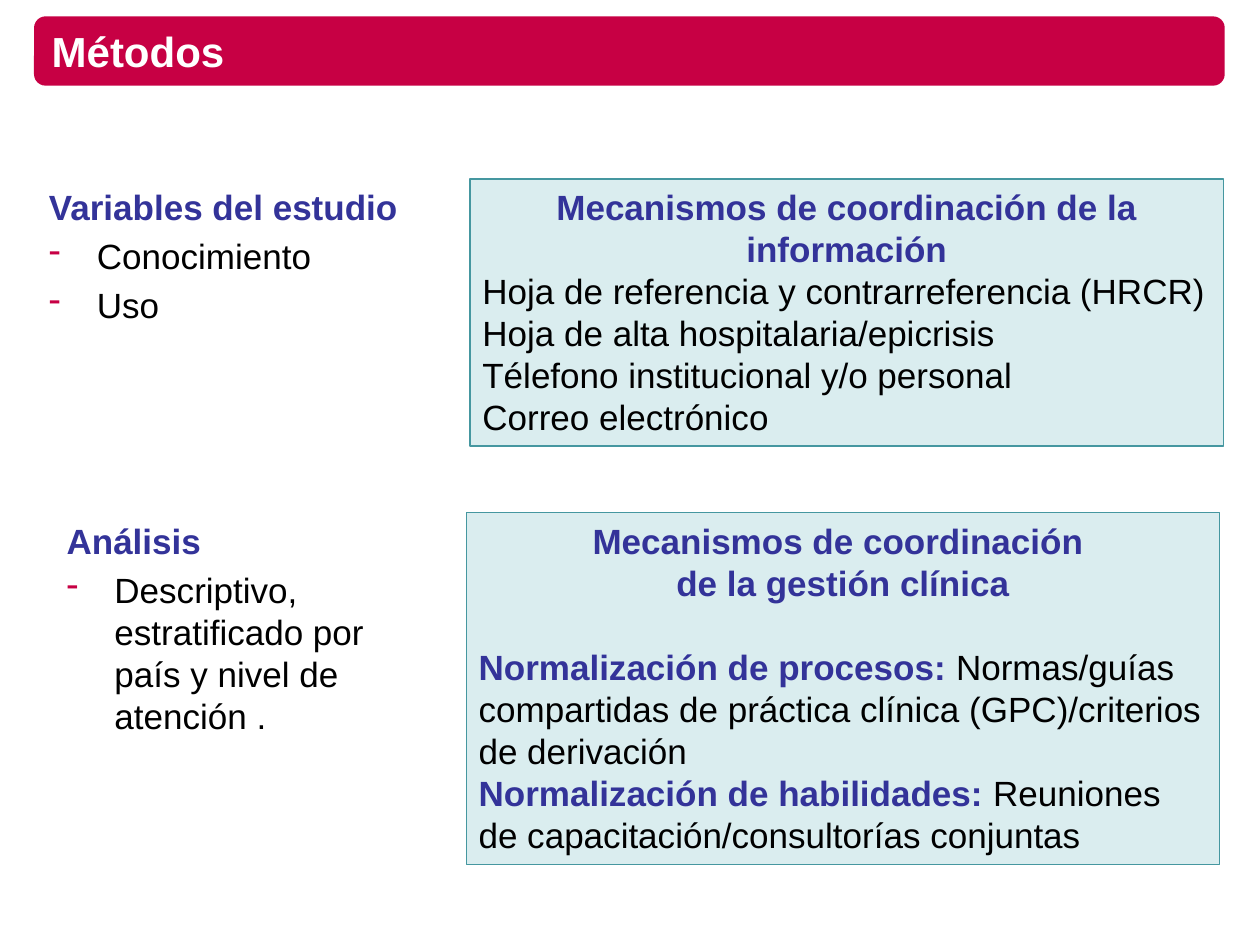
import dataclasses
import lxml.etree
import pptx
import pptx.dml.color
import pptx.enum.shapes
import pptx.enum.text
import pptx.oxml.ns
import pptx.util


@dataclasses.dataclass(frozen=True)
class Theme:
    font: str = "Arial"
    title_size: int = 24
    body_size: int = 20
    accent: str = "C70044"
    heading: str = "333399"
    text: str = "000000"
    inverse: str = "FFFFFF"
    panel: str = "DAEDEF"
    border: str = "4597A0"


THEME = Theme()
WIDTH, HEIGHT = 10, 7.5
UPPER_ROW, LOWER_ROW = 1.42, 4.07
PANEL_WIDTH = 5.98
ALIGN = pptx.enum.text.PP_ALIGN


def color(value):
    return pptx.dml.color.RGBColor.from_string(value)


def inches(box):
    return [pptx.util.Inches(length) for length in box]


def style(font, size, value, bold):
    font.name = THEME.font
    font.size = pptx.util.Pt(size)
    font.bold = bold
    font.color.rgb = color(value)


def style_body(font, is_heading):
    style(font, THEME.body_size, THEME.heading if is_heading else THEME.text, is_heading)


def add_block(page, kind, box, fill, line=None):
    block = page.shapes.add_shape(kind, *inches(box))
    block.shadow.inherit = False
    block.fill.solid()
    block.fill.fore_color.rgb = color(fill)
    if line:
        block.line.color.rgb = color(line)
        block.line.width = pptx.util.Pt(0.75)
    else:
        block.line.fill.background()
    return block


def next_paragraph(frame, index):
    return frame.add_paragraph() if index else frame.paragraphs[0]


def add_dash(para):
    properties = para._p.get_or_add_pPr()
    indent = pptx.util.Inches(0.38)
    properties.set("marL", str(indent))
    properties.set("indent", str(-indent))
    qn = pptx.oxml.ns.qn
    bullet_color = lxml.etree.SubElement(properties, qn("a:buClr"))
    lxml.etree.SubElement(bullet_color, qn("a:srgbClr"), val=THEME.accent)
    lxml.etree.SubElement(properties, qn("a:buChar"), char="-")


def add_banner(page, box, text):
    left, top, width, height = box
    band = add_block(page, pptx.enum.shapes.MSO_SHAPE.ROUNDED_RECTANGLE, box, THEME.accent)
    title = page.shapes.title
    page.shapes._spTree.remove(band._element)
    title._element.addprevious(band._element)
    title.left, title.top, title.width, title.height = inches(
        (left + 0.04, top - 0.08, width + 0.28, height + 0.16))
    title.text_frame.text = text
    title.text_frame.vertical_anchor = pptx.enum.text.MSO_ANCHOR.MIDDLE
    para = title.text_frame.paragraphs[0]
    para.alignment = ALIGN.LEFT
    style(para.font, THEME.title_size, THEME.inverse, True)


def add_list(page, box, heading, items):
    frame = page.shapes.add_textbox(*inches(box)).text_frame
    frame.word_wrap = True
    for index, text in enumerate([heading, *items]):
        para = next_paragraph(frame, index)
        para.text = text
        para.space_before = pptx.util.Pt(THEME.body_size * 0.2)
        style_body(para.font, index == 0)
        if index:
            add_dash(para)


def add_panel(page, box, headings, entries, gap=0):
    panel = add_block(page, pptx.enum.shapes.MSO_SHAPE.RECTANGLE, box,
                      THEME.panel, THEME.border)
    frame = panel.text_frame
    frame.word_wrap = True
    frame.vertical_anchor = pptx.enum.text.MSO_ANCHOR.TOP
    for index, text in enumerate(headings):
        para = next_paragraph(frame, index)
        para.text = text
        para.alignment = ALIGN.CENTER
        style_body(para.font, True)
    for index, (label, text) in enumerate(entries):
        para = frame.add_paragraph()
        para.alignment = ALIGN.LEFT
        if index == 0:
            para.space_before = pptx.util.Pt(gap)
        style_body(para.font, False)
        if label:
            span = para.add_run()
            span.text = label
            style_body(span.font, True)
        para.add_run().text = text


def build_methods(deck):
    page = deck.slides.add_slide(deck.slide_layouts[5])
    add_banner(page, (0.27, 0.13, 9.45, 0.55), "Métodos")
    add_list(page, (0.29, UPPER_ROW, 3.11, 1.37), "Variables del estudio",
             ["Conocimiento", "Uso"])
    add_list(page, (0.43, LOWER_ROW, 3.09, 1.81), "Análisis",
             ["Descriptivo, estratificado por país y nivel de atención ."])
    add_panel(page, (3.73, UPPER_ROW, PANEL_WIDTH, 2.12),
              ["Mecanismos de coordinación de la información"],
              [("", "Hoja de referencia y contrarreferencia (HRCR)"),
               ("", "Hoja de alta hospitalaria/epicrisis"),
               ("", "Télefono institucional y/o personal"),
               ("", "Correo electrónico")])
    add_panel(page, (3.7, LOWER_ROW, PANEL_WIDTH, 2.79),
              ["Mecanismos de coordinación ", "de la gestión clínica"],
              [("Normalización de procesos: ",
                "Normas/guías compartidas de práctica clínica (GPC)/criterios de derivación"),
               ("Normalización de habilidades: ",
                "Reuniones de capacitación/consultorías conjuntas")],
              gap=THEME.body_size * 1.2)


def main():
    deck = pptx.Presentation()
    deck.slide_width, deck.slide_height = inches((WIDTH, HEIGHT))
    build_methods(deck)
    deck.save("out.pptx")


if __name__ == "__main__":
    main()
